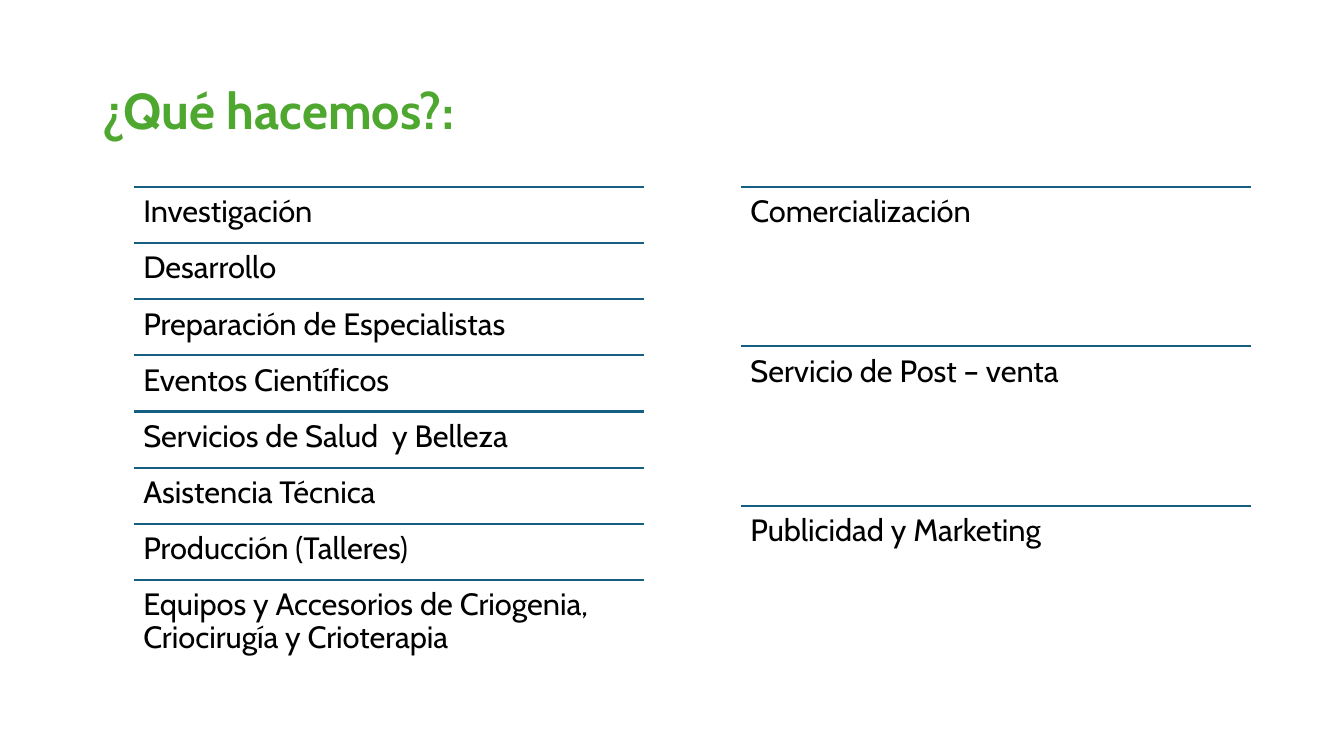
from lxml import etree
from pptx import Presentation
from pptx.dml.color import RGBColor
from pptx.enum import shapes, text
from pptx.oxml import ns
from pptx.util import Pt

COLORS = {"title": "4EA72E", "rule": "156082", "body": "000000"}
FONT = "Cabin"
COLUMN_WIDTH = 364.5
ACTIVITIES = [
    "Investigación",
    "Desarrollo",
    "Preparación de Especialistas",
    "Eventos Científicos",
    "Servicios de Salud  y Belleza",
    "Asistencia Técnica",
    "Producción (Talleres)",
    "Equipos y Accesorios de Criogenia, Criocirugía y Crioterapia",
]
COMMERCE = ["Comercialización", "Servicio de Post – venta", "Publicidad y Marketing"]


def add_label(slide, wording, box, size, color, margins, anchor, bold=False):
    label = slide.shapes.add_textbox(*map(Pt, box))
    frame = label.text_frame
    frame.word_wrap = True
    frame.vertical_anchor = anchor
    frame.margin_left = frame.margin_right = Pt(margins[0])
    frame.margin_top = frame.margin_bottom = Pt(margins[1])
    frame.text = wording
    paragraph = frame.paragraphs[0]
    paragraph.line_spacing = 0.9
    font = paragraph.runs[0].font
    font.name, font.size, font.bold = FONT, Pt(size), bold
    font.color.rgb = RGBColor.from_string(COLORS[color])


def add_rule(slide, left, top):
    rule = slide.shapes.add_connector(
        shapes.MSO_CONNECTOR.STRAIGHT, Pt(left), Pt(top), Pt(left + COLUMN_WIDTH), Pt(top)
    )
    rule.line.color.rgb = RGBColor.from_string(COLORS["rule"])
    rule.line.width = Pt(1.5)
    etree.SubElement(rule._element.spPr, ns.qn("a:effectLst"))


def add_ruled_list(slide, entries, left, top, pitch, last_height):
    for index, entry in enumerate(entries):
        entry_top = top + index * pitch
        height = last_height if index == len(entries) - 1 else pitch
        add_rule(slide, left, entry_top)
        add_label(slide, entry, (left, entry_top, COLUMN_WIDTH, height), 22, "body",
                  (6.6, 6.6), text.MSO_ANCHOR.TOP)


def main():
    deck = Presentation()
    deck.slide_width, deck.slide_height = Pt(960), Pt(540)
    slide = deck.slides.add_slide(deck.slide_layouts[6])
    add_label(slide, "¿Qué hacemos?:", (66, 28.75, 828, 104.4), 36, "title",
              (7.2, 3.6), text.MSO_ANCHOR.MIDDLE, bold=True)
    add_ruled_list(slide, ACTIVITIES, 95.75, 133.6, 40.08, 62)
    add_ruled_list(slide, COMMERCE, 529.4, 133.3, 114.1, 114.1)
    deck.save("out.pptx")


if __name__ == "__main__":
    main()
